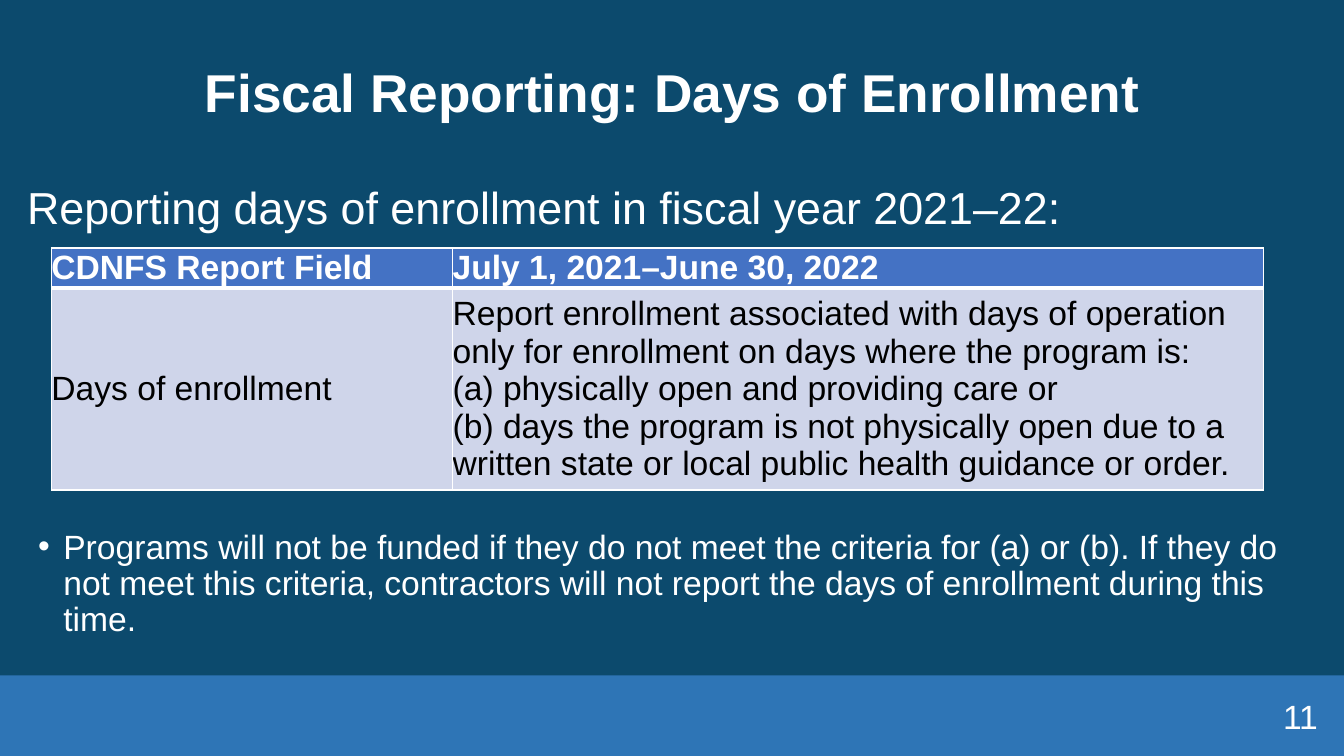
from pptx import Presentation
from pptx.dml.color import RGBColor
from pptx.enum.shapes import MSO_SHAPE as Shape
from pptx.enum.text import MSO_ANCHOR as Anchor, PP_ALIGN as Align
from pptx.oxml import parse_xml
from pptx.oxml.ns import nsdecls
from pptx.util import Inches, Pt

NAVY = RGBColor(0x0C, 0x4A, 0x6D)
BAND_BLUE = RGBColor(0x2E, 0x75, 0xB6)
HEADER_BLUE = RGBColor(0x44, 0x72, 0xC4)
PALE_BLUE = RGBColor(0xCF, 0xD5, 0xEA)
WHITE = RGBColor(0xFF, 0xFF, 0xFF)
BLACK = RGBColor(0, 0, 0)


def write(frame, *texts, size=24, color=WHITE, bold=False, align=Align.LEFT,
          anchor=Anchor.TOP, spacing=1.0, before=0):
    frame.word_wrap = True
    frame.vertical_anchor = anchor
    for i, text in enumerate(texts):
        line = frame.paragraphs[0] if i == 0 else frame.add_paragraph()
        line.alignment = align
        line.line_spacing = spacing
        line.space_before = Pt(before)
        run = line.add_run()
        run.text = text
        run.font.name = "Arial"
        run.font.size = Pt(size)
        run.font.bold = bold
        run.font.color.rgb = color


prs = Presentation()
prs.slide_width, prs.slide_height = Inches(13.33), Inches(7.5)
slide = prs.slides.add_slide(prs.slide_layouts[5])
slide.background.fill.solid()
slide.background.fill.fore_color.rgb = NAVY

# Footer band
band = slide.shapes.add_shape(Shape.RECTANGLE, 0, Inches(6.7), Inches(13.33), Inches(0.8))
band.shadow.inherit = False
band.fill.solid()
band.fill.fore_color.rgb = BAND_BLUE
band.line.fill.background()

# Title
title = slide.shapes.title
title.left, title.top = Inches(0.17), Inches(0.22)
title.width, title.height = Inches(13), Inches(1.45)
write(title.text_frame, "Fiscal Reporting: Days of Enrollment", size=38, bold=True,
      align=Align.CENTER, anchor=Anchor.MIDDLE, spacing=0.9)

# Lead-in sentence
lead = slide.shapes.add_textbox(Inches(0.17), Inches(1.79), Inches(13), Inches(0.6))
write(lead.text_frame, "Reporting days of enrollment in fiscal year 2021–22:",
      size=32, spacing=0.9, before=10)

# Reporting table
ROWS = [
    [["CDNFS Report Field"], ["July 1, 2021–June 30, 2022"]],
    [["Days of enrollment"],
     ["Report enrollment associated with days of operation only for enrollment "
      "on days where the program is:",
      "(a) physically open and providing care or",
      "(b) days the program is not physically open due to a written state or "
      "local public health guidance or order."]],
]
report = slide.shapes.add_table(2, 2, Inches(0.51), Inches(2.46),
                                Inches(12.02), Inches(2.23)).table
for column, width in zip(report.columns, (3.98, 8.04)):
    column.width = Inches(width)
for row, height in zip(report.rows, (0.37, 1.86)):
    row.height = Inches(height)
for r, row in enumerate(ROWS):
    header = r == 0
    for c, texts in enumerate(row):
        cell = report.cell(r, c)
        cell.margin_left = cell.margin_right = cell.margin_top = cell.margin_bottom = 0
        write(cell.text_frame, *texts, bold=header, color=WHITE if header else BLACK)
        cell.vertical_anchor = Anchor.MIDDLE
        # Borders come before the fill; the rule under the header is thicker
        for side in ("lnL", "lnR", "lnT", "lnB"):
            thick = side == ("lnB" if header else "lnT")
            cell._tc.get_or_add_tcPr().append(parse_xml(
                f'<a:{side} {nsdecls("a")} w="{Pt(3 if thick else 1)}"><a:solidFill>'
                f'<a:srgbClr val="{WHITE}"/></a:solidFill></a:{side}>'))
        cell.fill.solid()
        cell.fill.fore_color.rgb = HEADER_BLUE if header else PALE_BLUE

# Funding note with a bullet
note = slide.shapes.add_textbox(Inches(0.28), Inches(5.21), Inches(12.79), Inches(1.19))
write(note.text_frame,
      "Programs will not be funded if they do not meet the criteria for (a) or (b). "
      "If they do not meet this criteria, contractors will not report the days of "
      "enrollment during this time.", spacing=0.9, before=10)
bullet = note.text_frame.paragraphs[0]._p.get_or_add_pPr()
bullet.set("marL", str(Inches(0.25)))
bullet.set("indent", str(Inches(-0.25)))
bullet.append(parse_xml(f'<a:buFont {nsdecls("a")} typeface="Arial"/>'))
bullet.append(parse_xml(f'<a:buChar {nsdecls("a")} char="•"/>'))

# Slide number
number = slide.shapes.add_textbox(Inches(10.17), Inches(6.9), Inches(3), Inches(0.4))
write(number.text_frame, "11", align=Align.RIGHT, anchor=Anchor.MIDDLE)

prs.save("out.pptx")
